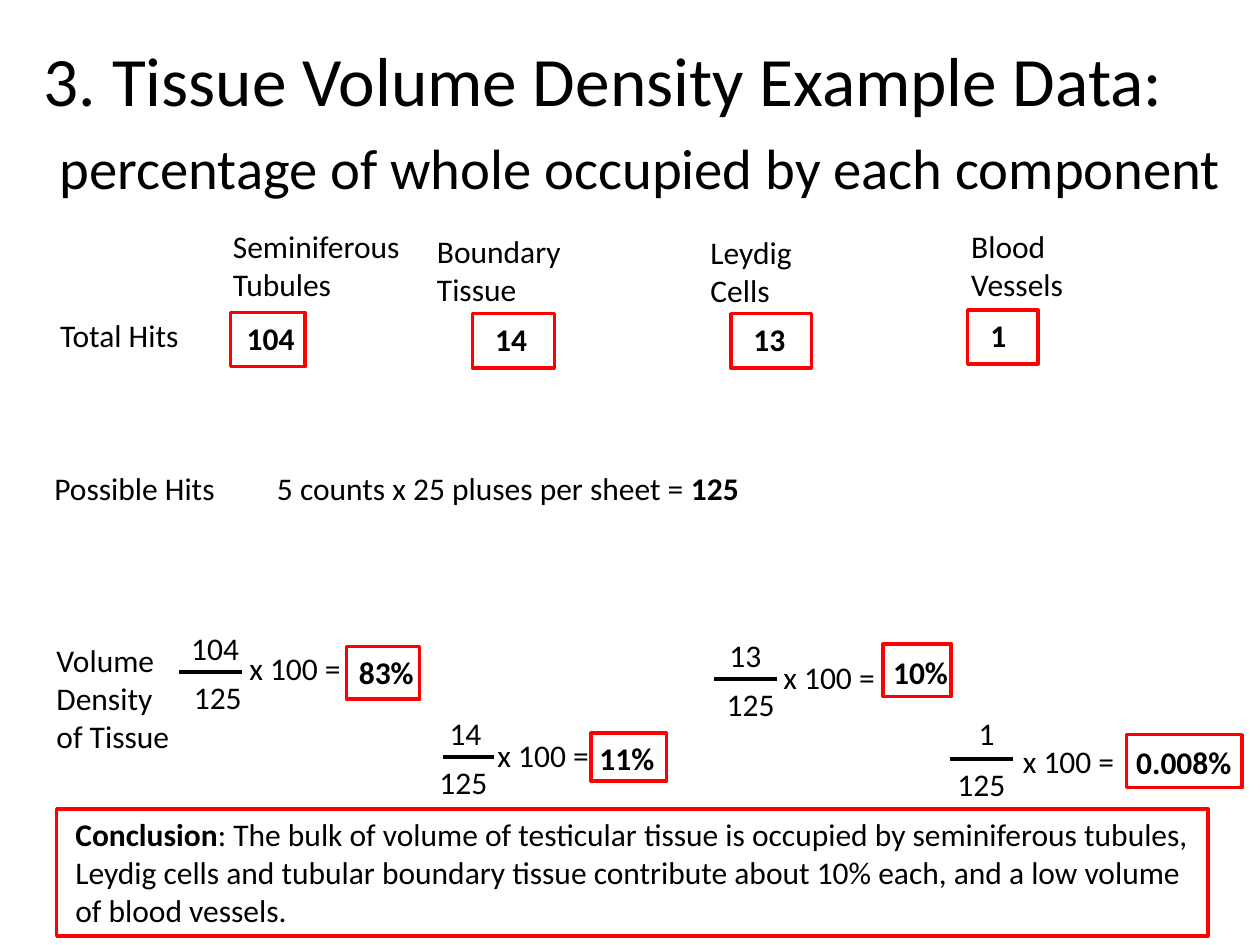
from pptx import Presentation
from pptx.dml.color import RGBColor
from pptx.enum.shapes import MSO_CONNECTOR, MSO_SHAPE
from pptx.enum.text import MSO_ANCHOR
from pptx.oxml.ns import qn
from pptx.util import Pt
from lxml.etree import SubElement

COLORS = {"text": "000000", "frame": "FF0000", "bar": "000000"}
FONT = "Calibri"
LINE_HEIGHT = 29


def color(name):
    return RGBColor.from_string(COLORS[name])


def add_text(slide, box, *runs, anchor=MSO_ANCHOR.TOP):
    label = slide.shapes.add_textbox(*map(Pt, box))
    frame = label.text_frame
    frame.word_wrap = True
    frame.vertical_anchor = anchor
    paragraph = frame.paragraphs[0]
    paragraph.text = "".join(words for words, size, bold in runs)
    if len(runs) > 1:
        paragraph.clear()
        for words, size, bold in runs:
            lines = words.split("\v")
            for number, line in enumerate(lines):
                if number:
                    paragraph.add_line_break()
                paragraph.add_run().text = line
    formats = [(size, bold) for words, size, bold in runs for line in words.split("\v")]
    for run, (size, bold) in zip(paragraph.runs, formats):
        run.font.name = FONT
        run.font.size = Pt(size)
        run.font.bold = bold
        run.font.color.rgb = color("text")


def add_label(slide, left, top, width, words, bold=False, lines=1):
    add_text(slide, (left, top, width, 7.2 + 21.9 * lines), (words, 18, bold))


def add_frame(slide, box):
    frame = slide.shapes.add_shape(MSO_SHAPE.RECTANGLE, *map(Pt, box))
    frame.shadow.inherit = False
    frame.fill.background()
    frame.line.color.rgb = color("frame")
    frame.line.width = Pt(2)


def add_title(slide, box):
    add_text(
        slide, box,
        ("3. Tissue Volume Density Example Data:\v ", 39.6, False),
        ("percentage of whole occupied by each component", 32.4, False),
        anchor=MSO_ANCHOR.MIDDLE,
    )


def add_framed_value(slide, box, value, shift, drop=0, text_width=51):
    left, top, width, height = box
    add_label(slide, left + shift, top + drop, text_width, value, bold=True)
    add_frame(slide, box)


def add_fraction(slide, box, hits, hits_shift, possible_shift, factor_offset):
    left, top, width, height = box
    bar_y = top + height
    add_label(slide, left + hits_shift, top, 51, hits)
    add_label(slide, left + possible_shift, bar_y, 51, "125")
    bar = slide.shapes.add_connector(
        MSO_CONNECTOR.STRAIGHT, Pt(left), Pt(bar_y), Pt(left + width), Pt(bar_y))
    bar.line.color.rgb = color("bar")
    bar.line.width = Pt(2.25)
    SubElement(bar.element.spPr, qn("a:effectLst"))
    factor_shift, factor_rise = factor_offset
    add_label(slide, left + factor_shift, bar_y - factor_rise, 72, "x 100 =")


def add_total_hits(slide, left, top):
    add_label(slide, left, top, 96, "Total Hits")
    tissues = [
        ("Seminiferous Tubules", (126, 126, 123), "104", (131.8, 178.6, 42.5, 31), 2.1),
        ("Boundary Tissue", (242.6, 128.9, 123), "14", (270, 179.3, 46.8, 31), 5.8),
        ("Leydig Cells", (398.9, 129.6, 75.6), "13", (417.6, 179.3, 46.1, 31), 5.8),
        ("Blood Vessels", (547.9, 126, 75.6), "1", (553, 177.1, 40.3, 31), 5.8),
    ]
    for tissue, heading, hits, hits_box, shift in tissues:
        add_label(slide, *heading, tissue, lines=2)
        add_framed_value(slide, hits_box, hits, shift)


def add_possible_hits(slide, left, top):
    add_label(slide, left, top, 108, "Possible Hits")
    add_text(
        slide, (151.2, top, 412.6, LINE_HEIGHT),
        ("5 counts x 25 pluses per sheet = ", 18, False), ("125", 18, True),
    )


def add_volume_density(slide, left, top):
    add_label(slide, left, top, 108, "Volume Density\vof Tissue", lines=3)
    fractions = [
        ((102.2, 355.7, 36, 28.1), "104", 0, 1.5, (33.2, 16.6)),
        ((253.4, 404.6, 28.8, 28.1), "14", -3.6, -9.4, (23.8, 15.8)),
        ((408.2, 360, 36, 28.1), "13", 1.5, 0, (32.4, 15.9)),
        ((542.9, 404.6, 36, 29.2), "1", 9.3, -2.9, (34.5, 13.5)),
    ]
    for fraction in fractions:
        add_fraction(slide, *fraction)
    densities = [
        ((198, 369.4, 41.8, 30.2), "83%", 0, 0),
        ((337.7, 419, 43.2, 27.4), "11%", -2.2, 0),
        ((504.7, 367.9, 38.9, 30.2), "10%", -1.4, 1.5),
        ((643.7, 419.8, 66.2, 30.2), "0.008%", -1.5, 1.4),
    ]
    for density in densities:
        add_framed_value(slide, *density, text_width=72)


def add_conclusion(slide, box):
    left, top, width, height = box
    add_text(
        slide, (left + 3.6, top, width - 3.6, height),
        ("Conclusion", 18, True),
        (": The bulk of volume of testicular tissue is occupied by seminiferous "
         "tubules, Leydig cells and tubular boundary tissue contribute about 10% "
         "each, and a low volume of blood vessels.", 18, False),
    )
    add_frame(slide, box)


def main():
    deck = Presentation()
    deck.slide_width, deck.slide_height = Pt(720), Pt(540)
    slide = deck.slides.add_slide(deck.slide_layouts[6])
    add_title(slide, (18, 18, 732, 102))
    add_total_hits(slide, 27.2, 177.1)
    add_possible_hits(slide, 24, 264.2)
    add_volume_density(slide, 25.2, 362.9)
    add_conclusion(slide, (32.4, 462.2, 658, 72.7))
    deck.save("out.pptx")


if __name__ == "__main__":
    main()
